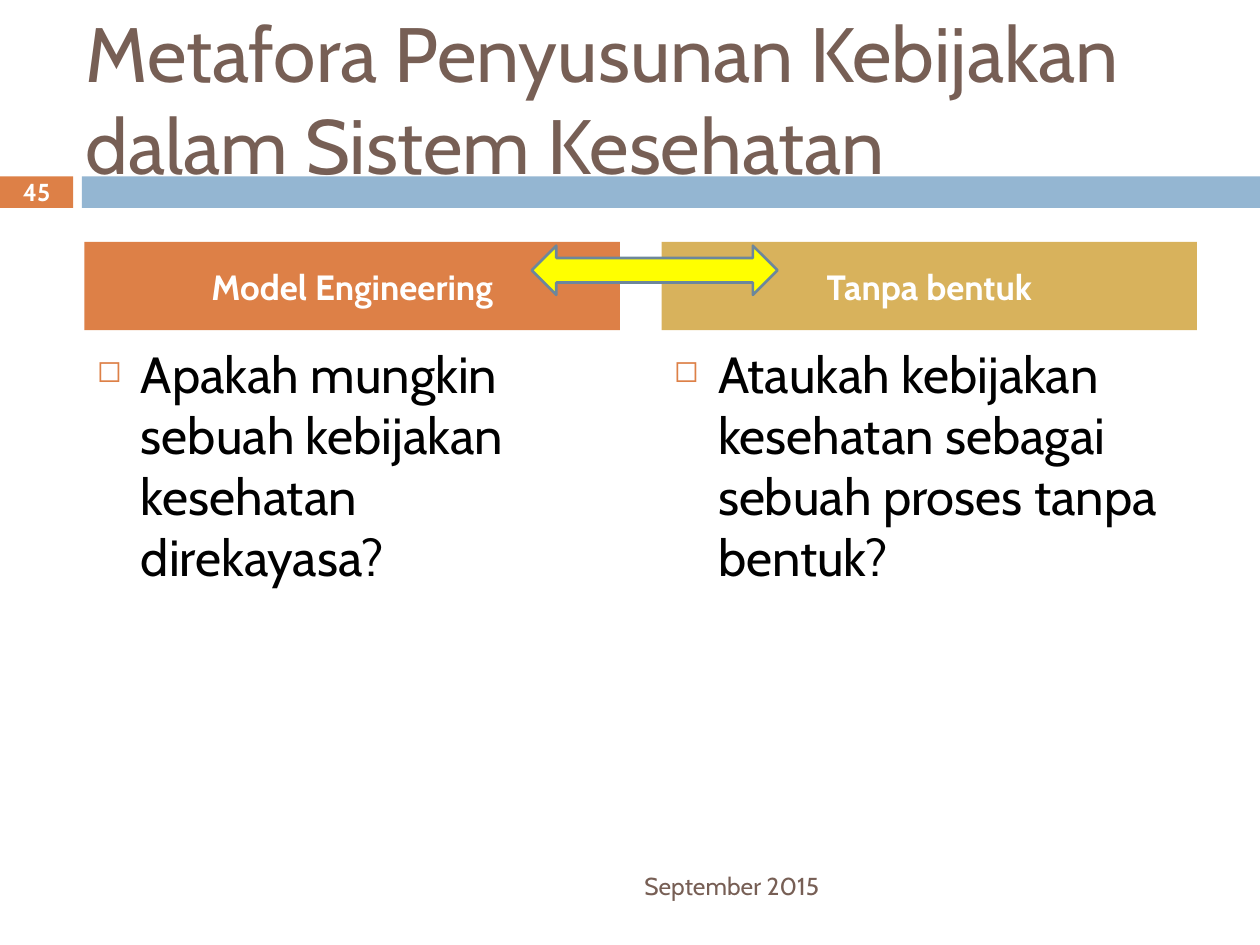
from lxml import etree
from pptx import Presentation
from pptx.dml.color import RGBColor
from pptx.enum.shapes import MSO_SHAPE
from pptx.enum.text import MSO_ANCHOR, PP_ALIGN
from pptx.oxml.ns import qn
from pptx.util import Inches, Pt

RECT, ARROW = MSO_SHAPE.RECTANGLE, MSO_SHAPE.LEFT_RIGHT_ARROW
TOP, MIDDLE = MSO_ANCHOR.TOP, MSO_ANCHOR.MIDDLE
LEFT, CENTER, RIGHT = PP_ALIGN.LEFT, PP_ALIGN.CENTER, PP_ALIGN.RIGHT
FONT = "Cabin"
ORANGE, BLUE, GOLD, YELLOW = "DD8047", "94B6D2", "D8B25C", "FFFF00"
BROWN, SLATE, WHITE, BLACK = "775F55", "6D879B", "FFFFFF", "000000"


def paint(target, color):
    """Set a fill, line or font to a hex colour."""
    if hasattr(target, "solid"):
        target.solid()
        target = target.fore_color
    else:
        target = target.color
    target.rgb = RGBColor.from_string(color)


def add_block(slide, box, color, kind=RECT, edge=None):
    """Add a filled shape, outlined only when an edge colour is given."""
    shape = slide.shapes.add_shape(kind, *map(Inches, box))
    shape.shadow.inherit = False
    paint(shape.fill, color)
    if edge:
        paint(shape.line, edge)
        shape.line.width = Pt(1.5)
    else:
        shape.line.fill.background()
    return shape


def write(shape, text, size, color, align=LEFT, anchor=MIDDLE, bold=False):
    """Put one styled paragraph into a shape and return it."""
    frame = shape.text_frame
    frame.word_wrap = True
    frame.vertical_anchor = anchor
    frame.text = text
    para = frame.paragraphs[0]
    para.alignment = align
    font = para.runs[0].font
    font.name, font.size, font.bold = FONT, Pt(size), bold
    paint(font, color)
    return para


def add_text(slide, box, *args, **style):
    """Add a text box with one styled paragraph."""
    return write(slide.shapes.add_textbox(*map(Inches, box)), *args, **style)


def set_bullet(para):
    """Give a paragraph a hanging square bullet."""
    props = para._p.get_or_add_pPr()
    props.set("marL", str(Inches(0.35)))
    props.set("indent", str(-Inches(0.35)))
    color = etree.SubElement(props, qn("a:buClr"))
    etree.SubElement(color, qn("a:srgbClr"), val=ORANGE)
    etree.SubElement(props, qn("a:buSzPct"), val="60000")
    etree.SubElement(props, qn("a:buChar"), char="◻")


def add_band(slide, left, top, width, height):
    """Draw the band with the slide number at its left end."""
    tab, start = 0.58, 0.65
    add_block(slide, (left, top, tab, height), ORANGE)
    add_block(slide, (left + start, top, width - start, height), BLUE)
    add_text(slide, (left, top, tab, height), "45", 14, WHITE,
             align=CENTER, bold=True)


def add_column(slide, box, color, head, body):
    """Draw a coloured heading with a bulleted text below it."""
    left, top, width, height = box
    bar, drop = 0.7, 0.75
    title = write(add_block(slide, (left, top, width, bar), color),
                  head, 20, WHITE, align=CENTER, bold=True)
    item = add_text(slide, (left, top + drop, width, height - drop),
                    body, 29, BLACK, anchor=TOP)
    title.space_before = item.space_before = Pt(7)
    set_bullet(item)


def main():
    """Build and save the slide."""
    deck = Presentation()
    deck.slide_width, deck.slide_height = Inches(10), Inches(7.5)
    slide = deck.slides.add_slide(deck.slide_layouts[6])
    add_band(slide, 0, 1.4, 10, 0.25)
    add_text(slide, (0.58, 0.3, 8.92, 0.95),
             "Metafora Penyusunan Kebijakan dalam Sistem Kesehatan", 44, BROWN)
    columns = [
        (ORANGE, "Model Engineering",
         "Apakah mungkin sebuah kebijakan kesehatan direkayasa?"),
        (GOLD, "Tanpa bentuk",
         "Ataukah kebijakan kesehatan sebagai sebuah proses tanpa bentuk?"),
    ]
    for index, column in enumerate(columns):
        add_column(slide, (0.67 + index * 4.58, 1.92, 4.25, 4.67), *column)
    add_block(slide, (4.22, 1.95, 1.95, 0.39), YELLOW, ARROW, SLATE)
    add_text(slide, (0.67, 6.83, 5.93, 0.4), "September 2015", 14, BROWN,
             align=RIGHT)
    deck.save("out.pptx")


if __name__ == "__main__":
    main()
